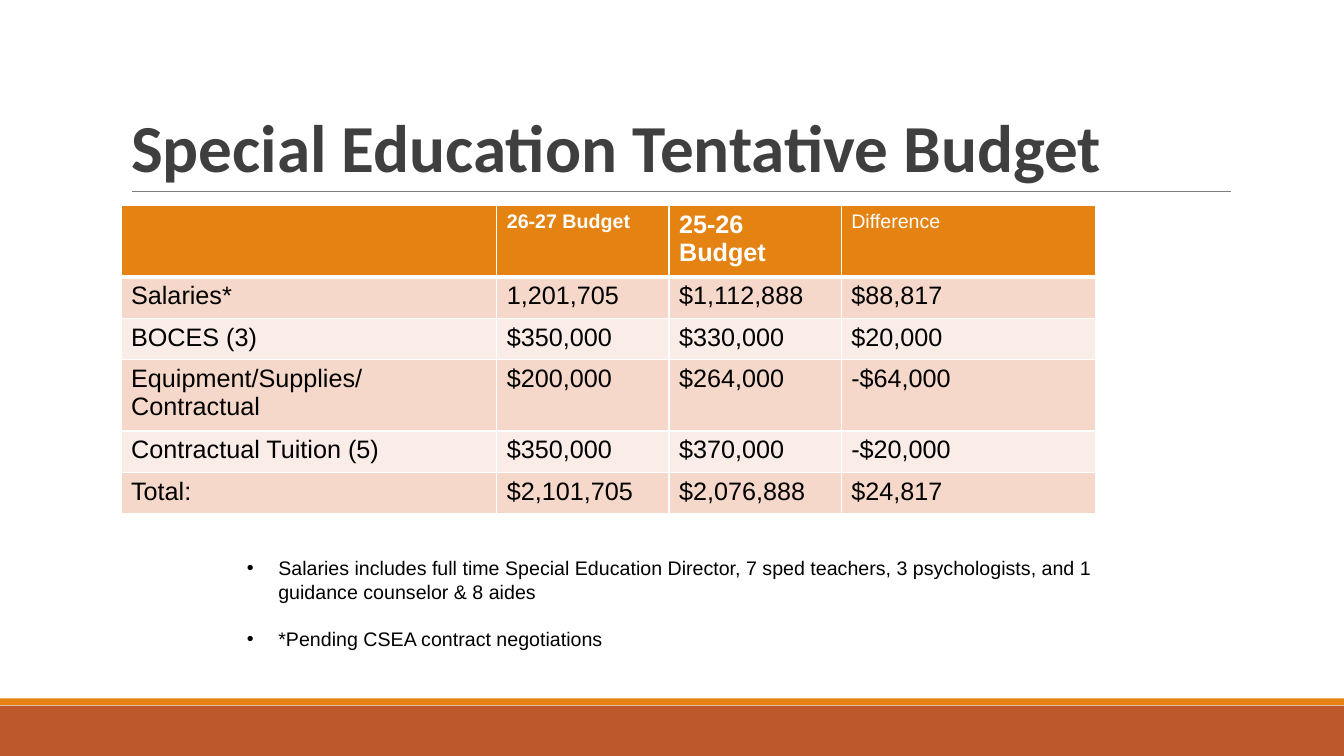
from lxml.etree import SubElement
from pptx import Presentation
from pptx.dml.color import RGBColor
from pptx.enum.shapes import MSO_CONNECTOR as Connector, MSO_SHAPE as Preset
from pptx.enum.text import MSO_ANCHOR as Anchor, MSO_AUTO_SIZE as AutoSize, PP_ALIGN as Align
from pptx.oxml.ns import qn
from pptx.util import Cm, Pt

WHITE = RGBColor(0xFF, 0xFF, 0xFF)
BLACK = RGBColor(0x00, 0x00, 0x00)
CHARCOAL = RGBColor(0x3F, 0x3F, 0x3F)
GRAY = RGBColor(0x7F, 0x7F, 0x7F)
ORANGE = RGBColor(0xE4, 0x83, 0x12)
RUST = RGBColor(0xBD, 0x58, 0x2C)
PEACH = RGBColor(0xF5, 0xD8, 0xCA)
PALE_PEACH = RGBColor(0xFA, 0xEC, 0xE6)

SLIDE_WIDTH, SLIDE_HEIGHT = Cm(33.87), Cm(19.05)
COLUMN_WIDTHS = [Cm(9.47), Cm(4.34), Cm(4.34), Cm(6.4)]
ROW_HEIGHTS = [Cm(1.8), Cm(1.04), Cm(1.04), Cm(1.8), Cm(1.04), Cm(1.04)]
HEADER_STYLES = [(18, True), (14, True), (18, True), (14, False)]
BUDGET = [
    ["", "26-27 Budget", "25-26 Budget", "Difference"],
    ["Salaries*", "1,201,705", "$1,112,888", "$88,817"],
    ["BOCES (3)", "$350,000", "$330,000", "$20,000"],
    ["Equipment/Supplies/Contractual", "$200,000", "$264,000", "-$64,000"],
    ["Contractual Tuition (5)", "$350,000", "$370,000", "-$20,000"],
    ["Total:", "$2,101,705", "$2,076,888", "$24,817"],
]
NOTES = [
    "Salaries includes full time Special Education Director, 7 sped teachers, "
    "3 psychologists, and 1 guidance counselor & 8 aides",
    "*Pending CSEA contract negotiations",
]


def set_font(paragraph, name, size, color, bold=False):
    font = paragraph.font
    font.name, font.size, font.bold = name, Pt(size), bold
    font.color.rgb = color


def place(shape, left, top, width, height):
    shape.left, shape.top, shape.width, shape.height = left, top, width, height


def add_band(slide, top, height, color):
    band = slide.shapes.add_shape(Preset.RECTANGLE, 0, top, SLIDE_WIDTH, height)
    band.shadow.inherit = False
    band.fill.solid()
    band.fill.fore_color.rgb = color
    band.line.fill.background()


def add_rule(slide, left, right, y):
    rule = slide.shapes.add_connector(Connector.STRAIGHT, left, y, right, y)
    rule.line.color.rgb = GRAY
    rule.line.width = Pt(0.75)
    SubElement(rule._element.spPr, qn("a:effectLst"))


def fill_title(title, wording):
    place(title, Cm(3.05), Cm(0.79), Cm(27.94), Cm(4.04))
    frame = title.text_frame
    frame.text = wording
    frame.vertical_anchor = Anchor.BOTTOM
    frame.auto_size = AutoSize.NONE
    heading = frame.paragraphs[0]
    heading.alignment = Align.LEFT
    heading.line_spacing = 0.85
    set_font(heading, "Calibri", 48, CHARCOAL, True)


def set_borders(cell, top, bottom):
    properties = cell._tc.get_or_add_tcPr()
    for side, width in (("L", 1), ("R", 1), ("T", top), ("B", bottom)):
        border = SubElement(properties, qn(f"a:ln{side}"), w=str(Pt(width)))
        fill = SubElement(border, qn("a:solidFill"))
        SubElement(fill, qn("a:srgbClr"), val=str(WHITE))


def style_cell(cell, wording, row, column):
    set_borders(cell, 3 if row == 1 else 1, 3 if row == 0 else 1)
    cell.fill.solid()
    cell.text = wording
    paragraph = cell.text_frame.paragraphs[0]
    if row == 0:
        cell.fill.fore_color.rgb = ORANGE
        size, bold = HEADER_STYLES[column]
        set_font(paragraph, "Arial", size, WHITE, bold)
    else:
        cell.fill.fore_color.rgb = PEACH if row % 2 else PALE_PEACH
        set_font(paragraph, "Arial", 18, BLACK)


def add_budget_table(slide):
    budget = slide.shapes.add_table(
        len(BUDGET), len(COLUMN_WIDTHS), Cm(3.05), Cm(5.18),
        sum(COLUMN_WIDTHS), sum(ROW_HEIGHTS)).table
    for column, width in zip(budget.columns, COLUMN_WIDTHS):
        column.width = width
    for row, height in zip(budget.rows, ROW_HEIGHTS):
        row.height = height
    for row, entries in enumerate(BUDGET):
        for column, wording in enumerate(entries):
            style_cell(budget.cell(row, column), wording, row, column)


def add_bullet(paragraph):
    properties = paragraph._p.get_or_add_pPr()
    properties.set("marL", str(Cm(0.79)))
    properties.set("indent", str(-Cm(0.79)))
    SubElement(properties, qn("a:buFont"), typeface="Arial")
    SubElement(properties, qn("a:buChar"), char="•")


def fill_notes(body):
    place(body, Cm(5.97), Cm(13.31), Cm(23.09), Cm(3.25))
    frame = body.text_frame
    frame.text = "\n".join(NOTES)
    frame.auto_size = AutoSize.NONE
    frame.vertical_anchor = Anchor.TOP
    frame.margin_top = Cm(0.71)
    for index, note in enumerate(frame.paragraphs):
        add_bullet(note)
        note.space_before = Pt(17 if index else 0)
        set_font(note, "Arial", 14, BLACK)


def main():
    deck = Presentation()
    deck.slide_width, deck.slide_height = SLIDE_WIDTH, SLIDE_HEIGHT
    slide = deck.slides.add_slide(deck.slide_layouts[1])
    add_band(slide, Cm(17.78), Cm(1.27), RUST)
    add_band(slide, Cm(17.6), Cm(0.17), ORANGE)
    add_rule(slide, Cm(3.33), Cm(31.01), Cm(4.83))
    fill_title(slide.shapes.title, "Special Education Tentative Budget")
    add_budget_table(slide)
    fill_notes(slide.placeholders[1])
    deck.save("out.pptx")


if __name__ == "__main__":
    main()
